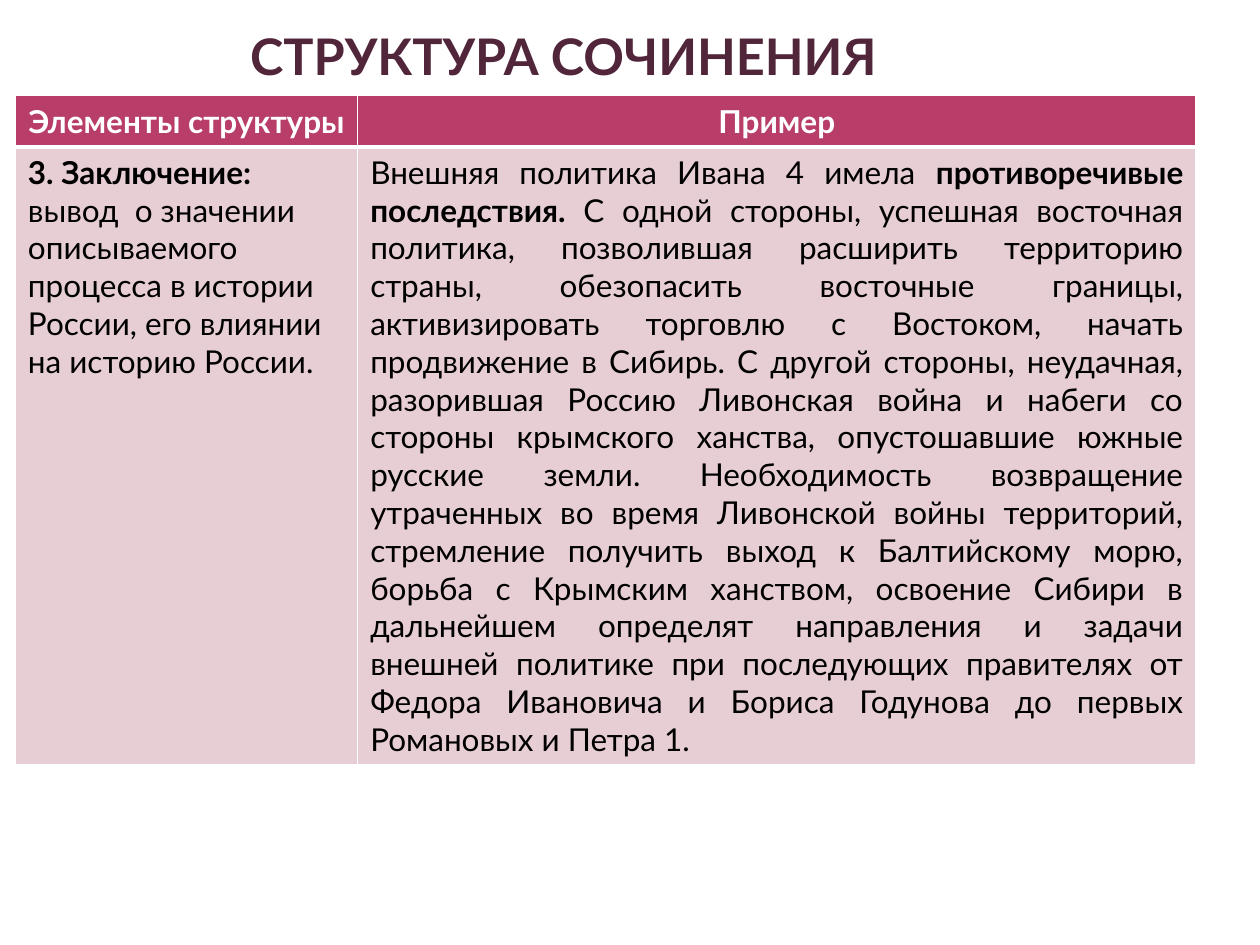
from dataclasses import dataclass

from lxml import etree
from pptx import Presentation
from pptx import util as u
from pptx.dml.color import RGBColor
from pptx.enum import text
from pptx.oxml.ns import qn


@dataclass(frozen=True)
class Theme:
    font: str = "Lato"
    title: str = "51253A"
    head: str = "B83D68"
    body: str = "E6CED4"
    light: str = "FFFFFF"
    dark: str = "000000"
    big: float = 28.8
    small: float = 18


class Deck:
    def __init__(self, theme):
        self.theme = theme
        self.prs = Presentation()
        self.prs.slide_width, self.prs.slide_height = u.Cm(25.4), u.Cm(19.05)
        self.slide = self.prs.slides.add_slide(self.prs.slide_layouts[6])

    def label(self, para, parts, size, color, align):
        para.alignment = align
        for words, bold in parts:
            run = para.add_run()
            run.text = words
            font = run.font
            font.name, font.size, font.bold = self.theme.font, u.Pt(size), bold
            font.color.rgb = RGBColor.from_string(color)

    def title(self, words, left, top, width, height):
        box = self.slide.shapes.add_textbox(*map(u.Cm, (left, top, width, height)))
        frame = box.text_frame
        frame.word_wrap = True
        frame.vertical_anchor = text.MSO_ANCHOR.BOTTOM
        frame.margin_left = frame.margin_right = u.Cm(0.13)
        frame.margin_top = frame.margin_bottom = 0
        self.label(frame.paragraphs[0], [(words, True)], self.theme.big,
                   self.theme.title, text.PP_ALIGN.CENTER)

    def border(self, cell, top, base):
        props = cell._tc.get_or_add_tcPr()
        for spot, (side, width) in enumerate(zip("LRTB", (1, 1, top, base))):
            line = etree.Element(qn(f"a:ln{side}"), w=str(u.Pt(width)))
            fill = etree.SubElement(line, qn("a:solidFill"))
            etree.SubElement(fill, qn("a:srgbClr"), val=self.theme.light)
            props.insert(spot, line)

    def cell(self, cell, parts, fill, color, align, top, base):
        cell.fill.solid()
        cell.fill.fore_color.rgb = RGBColor.from_string(fill)
        self.label(cell.text_frame.paragraphs[0], parts, self.theme.small, color, align)
        self.border(cell, top, base)

    def table(self, head, body, aligns, left, top, widths, heights):
        grid = self.slide.shapes.add_table(
            2, len(widths), u.Cm(left), u.Cm(top),
            u.Cm(sum(widths)), u.Cm(sum(heights))).table
        for row, height in zip(grid.rows, heights):
            row.height = u.Cm(height)
        look = self.theme
        for col, width in enumerate(widths):
            grid.columns[col].width = u.Cm(width)
            self.cell(grid.cell(0, col), [(head[col], True)], look.head,
                      look.light, text.PP_ALIGN.CENTER, 1, 3)
            self.cell(grid.cell(1, col), body[col], look.body,
                      look.dark, aligns[col], 3, 1)


def main():
    deck = Deck(Theme())
    deck.title("СТРУКТУРА СОЧИНЕНИЯ", 1.3, 0.53, 20.12, 1.2)
    goal = [
        ("3. Заключение: ", True),
        ("вывод  о значении описываемого процесса в истории России, "
         "его влиянии на историю России.", False),
    ]
    sample = [
        ("Внешняя политика Ивана 4 имела ", False),
        ("противоречивые последствия.", True),
        (" С одной стороны, успешная восточная политика, позволившая расширить "
         "территорию страны, обезопасить восточные границы, активизировать торговлю "
         "с Востоком, начать продвижение в Сибирь. С другой стороны, неудачная, "
         "разорившая Россию Ливонская война и набеги со стороны крымского ханства, "
         "опустошавшие южные русские земли. Необходимость возвращение утраченных во "
         "время Ливонской войны территорий, стремление получить выход к Балтийскому "
         "морю, борьба с Крымским ханством, освоение Сибири в дальнейшем определят "
         "направления и задачи внешней политике при последующих правителях от Федора "
         "Ивановича и Бориса Годунова до первых Романовых и Петра 1.", False),
    ]
    deck.table(["Элементы структуры", "Пример"], [goal, sample],
               [text.PP_ALIGN.LEFT, text.PP_ALIGN.JUSTIFY],
               0.31, 1.93, [6.9, 16.9], [1.03, 12.42])
    deck.prs.save("out.pptx")


if __name__ == "__main__":
    main()
